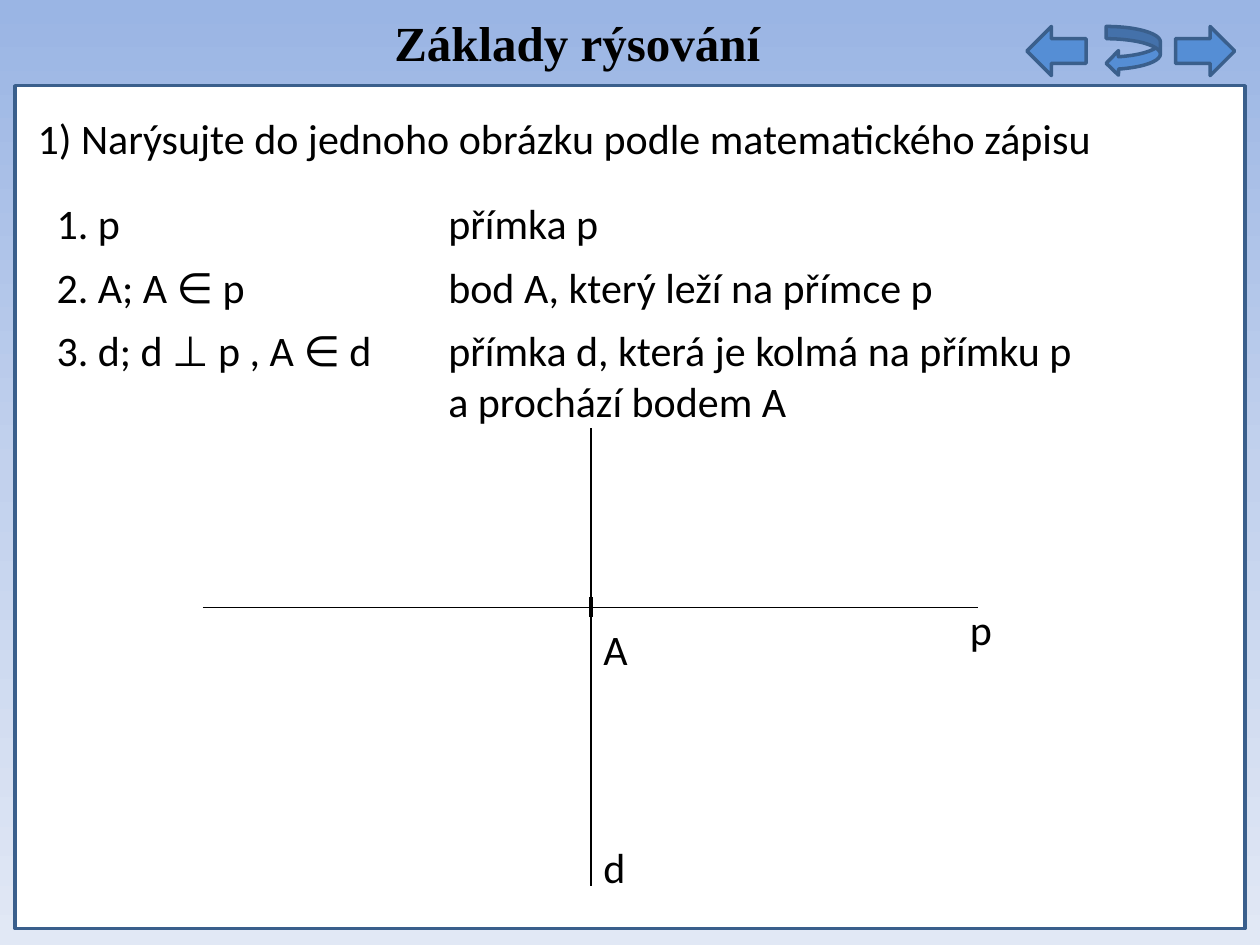
from copy import deepcopy
from pptx import Presentation
from pptx.dml.color import RGBColor
from pptx.enum import shapes, text
from pptx.oxml.ns import qn
from pptx.util import Inches, Pt

BLACK = RGBColor(0, 0, 0)
WHITE = RGBColor(255, 255, 255)
BLUE = RGBColor(0x55, 0x8E, 0xD5)
EDGE = RGBColor(0x3A, 0x5F, 0x8C)
SKY = [(0, RGBColor(0x9A, 0xB5, 0xE4)), (0.5, RGBColor(0xC2, 0xD1, 0xED)),
       (1, RGBColor(0xE1, 0xE8, 0xF5))]

TITLE = "Základy rýsování"
TASK = "1) Narýsujte do jednoho obrázku podle matematického zápisu"
STEPS = [
    ("1. p", "přímka p"),
    ("2. A; A ∈ p", "bod A, který leží na přímce p"),
    ("3. d; d ⊥ p , A ∈ d",
     "přímka d, která je kolmá na přímku p a prochází bodem A"),
]
TOP, STEP, ROW = 1.52, 0.505, 0.5
COLS = [(0.35, 2.91), (3.46, 5.16)]  # left, width

AX, AY, TICK = 4.69, 4.82, 0.08  # point A, where p and d cross
LINES = [  # x1, y1, x2, y2, weight
    (1.61, AY, 7.76, AY, 0.75),
    (AX, AY - TICK, AX, AY + TICK, 2.25),
    (AX, 3.4, AX, 7.03, 0.75),
]
LABELS = [("p", 7.6, AY - TICK), ("A", AX, AY + TICK), ("d", AX, 6.63)]

KIND = shapes.MSO_SHAPE
ARROWS = [(KIND.LEFT_ARROW, 8.15, 0.47), (KIND.CURVED_LEFT_ARROW, 8.78, 0.43),
          (KIND.RIGHT_ARROW, 9.33, 0.47)]


def paint_sky(slide):
    fill = slide.background.fill
    fill.gradient()
    fill.gradient_angle = 270
    stops = slide.element.find(".//" + qn("a:gsLst"))
    stops.append(deepcopy(stops[-1]))
    for stop, (pos, color) in zip(fill.gradient_stops, SKY):
        stop.position = pos
        stop.color.rgb = color


def add_shape(slide, kind, box, fill):
    shape = slide.shapes.add_shape(kind, *map(Inches, box))
    shape.shadow.inherit = False
    shape.fill.solid()
    shape.fill.fore_color.rgb = fill
    shape.line.color.rgb = EDGE
    shape.line.width = Pt(2)


def add_text(slide, words, x, y, w, h=ROW):
    box = slide.shapes.add_textbox(*map(Inches, (x, y, w, h)))
    frame = box.text_frame
    frame.word_wrap = True
    frame.auto_size = text.MSO_AUTO_SIZE.SHAPE_TO_FIT_TEXT
    frame.text = words
    font = frame.paragraphs[0].font
    font.name, font.size = "Calibri", Pt(24)
    font.color.rgb = BLACK


def add_line(slide, x1, y1, x2, y2, weight):
    line = slide.shapes.add_connector(
        shapes.MSO_CONNECTOR.STRAIGHT, *map(Inches, (x1, y1, x2, y2)))
    line.line.color.rgb = BLACK
    line.line.width = Pt(weight)
    props = line._element.spPr
    props.append(props.makeelement(qn("a:effectLst"), {}))


def set_title(slide):
    title = slide.shapes.title
    title.left, title.top, title.width, title.height = map(
        Inches, (3.03, 0.05, 3.14, 0.57))
    frame = title.text_frame
    frame.text = TITLE
    frame.word_wrap = False
    frame.auto_size = text.MSO_AUTO_SIZE.SHAPE_TO_FIT_TEXT
    frame.vertical_anchor = text.MSO_ANCHOR.TOP
    para = frame.paragraphs[0]
    para.alignment = text.PP_ALIGN.LEFT
    font = para.font
    font.name, font.size, font.bold = "Times New Roman", Pt(28), True
    font.color.rgb = BLACK


def main():
    prs = Presentation()
    prs.slide_width, prs.slide_height = Inches(10), Inches(7.5)
    slide = prs.slides.add_slide(prs.slide_layouts[5])
    paint_sky(slide)
    set_title(slide)
    add_shape(slide, KIND.RECTANGLE, (0.12, 0.68, 9.76, 6.69), WHITE)
    add_text(slide, TASK, 0.2, 0.84, 8.98)
    for row, step in enumerate(STEPS):
        for words, (x, w) in zip(step, COLS):
            high = 0.91 if len(words) > 40 else ROW
            add_text(slide, words, x, TOP + row * STEP, w, high)
    for line in LINES:
        add_line(slide, *line)
    for words, x, y in LABELS:
        add_text(slide, words, x, y, 0.63)
    for kind, x, w in ARROWS:
        add_shape(slide, kind, (x, 0.21, w, 0.39), BLUE)
    prs.save("out.pptx")


if __name__ == "__main__":
    main()
